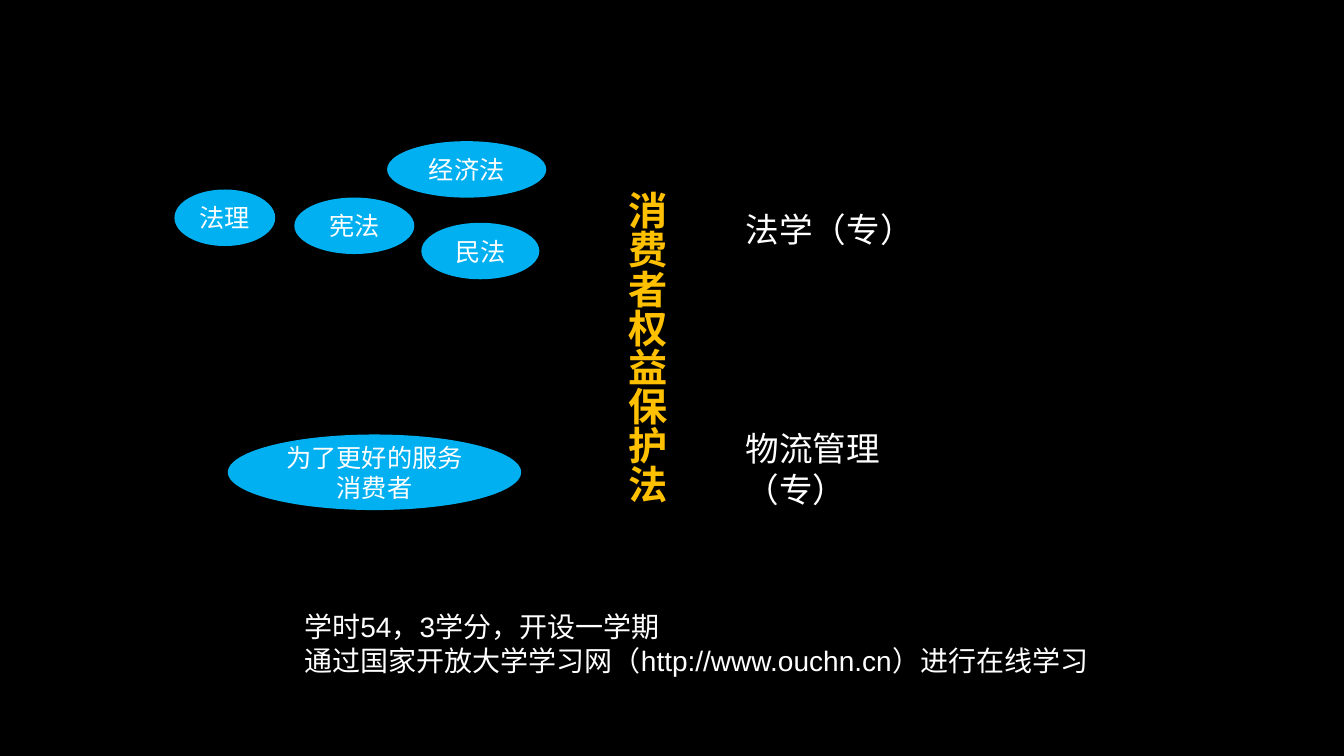
"""Build the slide that places the consumer protection law course."""
import pptx
import pptx.dml.color
import pptx.enum.shapes
import pptx.enum.text
import pptx.util

WIDTH = pptx.util.Inches(13.333)
HEIGHT = pptx.util.Inches(7.5)
FONT = "Arial"
COLOURS = {"back": "000000", "text": "FFFFFF", "course": "FFC000", "topic": "00B0F0"}
TOPIC_HEIGHT = 7.47
PROGRAMME_LEFT = 54.75

TOPICS = [
    ("法理", 12.98, 25.07, 7.5, TOPIC_HEIGHT),
    ("宪法", 21.9, 26.13, 8.93, TOPIC_HEIGHT),
    ("民法", 31.35, 29.47, 8.78, TOPIC_HEIGHT),
    ("经济法", 28.8, 18.67, 11.85, TOPIC_HEIGHT),
    ("为了更好的服务消费者", 16.95, 57.47, 21.83, 10),
]
PROGRAMMES = [
    ("法学（专）", 26.93, 16.28),
    ("物流管理（专）", 56, 18.15),
]
STUDY_LINES = [
    "学时54，3学分，开设一学期",
    "通过国家开放大学学习网（http://www.ouchn.cn）进行在线学习",
]


def colour(name):
    """Return the named colour of the palette."""
    return pptx.dml.color.RGBColor.from_string(COLOURS[name])


def place(left, top, width, height):
    """Turn percentages of the slide into lengths."""
    return [
        pptx.util.Emu(round(size * share / 100))
        for size, share in ((WIDTH, left), (HEIGHT, top), (WIDTH, width), (HEIGHT, height))
    ]


def write(frame, lines, size, name="text", bold=False, align=None):
    """Fill a text frame with one paragraph per line."""
    frame.word_wrap = True
    for index, line in enumerate(lines):
        para = frame.add_paragraph() if index else frame.paragraphs[0]
        para.alignment = align
        span = para.add_run()
        span.text = line
        span.font.name = FONT
        span.font.size = pptx.util.Pt(size)
        span.font.bold = bold
        span.font.color.rgb = colour(name)


def add_label(page, area, lines, size, **style):
    """Add a text box that grows with its text."""
    box = page.shapes.add_textbox(*place(*area))
    write(box.text_frame, lines, size, **style)
    box.text_frame.auto_size = pptx.enum.text.MSO_AUTO_SIZE.SHAPE_TO_FIT_TEXT
    return box


def add_topic(page, text, *area):
    """Add a filled ellipse with centred text."""
    topic = page.shapes.add_shape(pptx.enum.shapes.MSO_SHAPE.OVAL, *place(*area))
    topic.shadow.inherit = False
    topic.fill.solid()
    topic.fill.fore_color.rgb = colour("topic")
    topic.line.fill.background()
    topic.text_frame.vertical_anchor = pptx.enum.text.MSO_ANCHOR.MIDDLE
    write(topic.text_frame, [text], 18, align=pptx.enum.text.PP_ALIGN.CENTER)


def add_course(page):
    """Add the course name as a vertical column of text."""
    box = add_label(page, (45.23, 24, 5.03, 46.13), ["消费者权益保护法"], 28,
                    name="course", bold=True)
    box.element.txBody.bodyPr.set("vert", "eaVert")


def main():
    """Build and save the deck."""
    deck = pptx.Presentation()
    deck.slide_width, deck.slide_height = WIDTH, HEIGHT
    page = deck.slides.add_slide(deck.slide_layouts[6])
    page.background.fill.solid()
    page.background.fill.fore_color.rgb = colour("back")
    add_course(page)
    for text, top, width in PROGRAMMES:
        add_label(page, (PROGRAMME_LEFT, top, width, 6.67), [text], 24)
    for topic in TOPICS:
        add_topic(page, *topic)
    add_label(page, (21.9, 80, 63, 10.27), STUDY_LINES, 20)
    deck.save("out.pptx")


if __name__ == "__main__":
    main()
